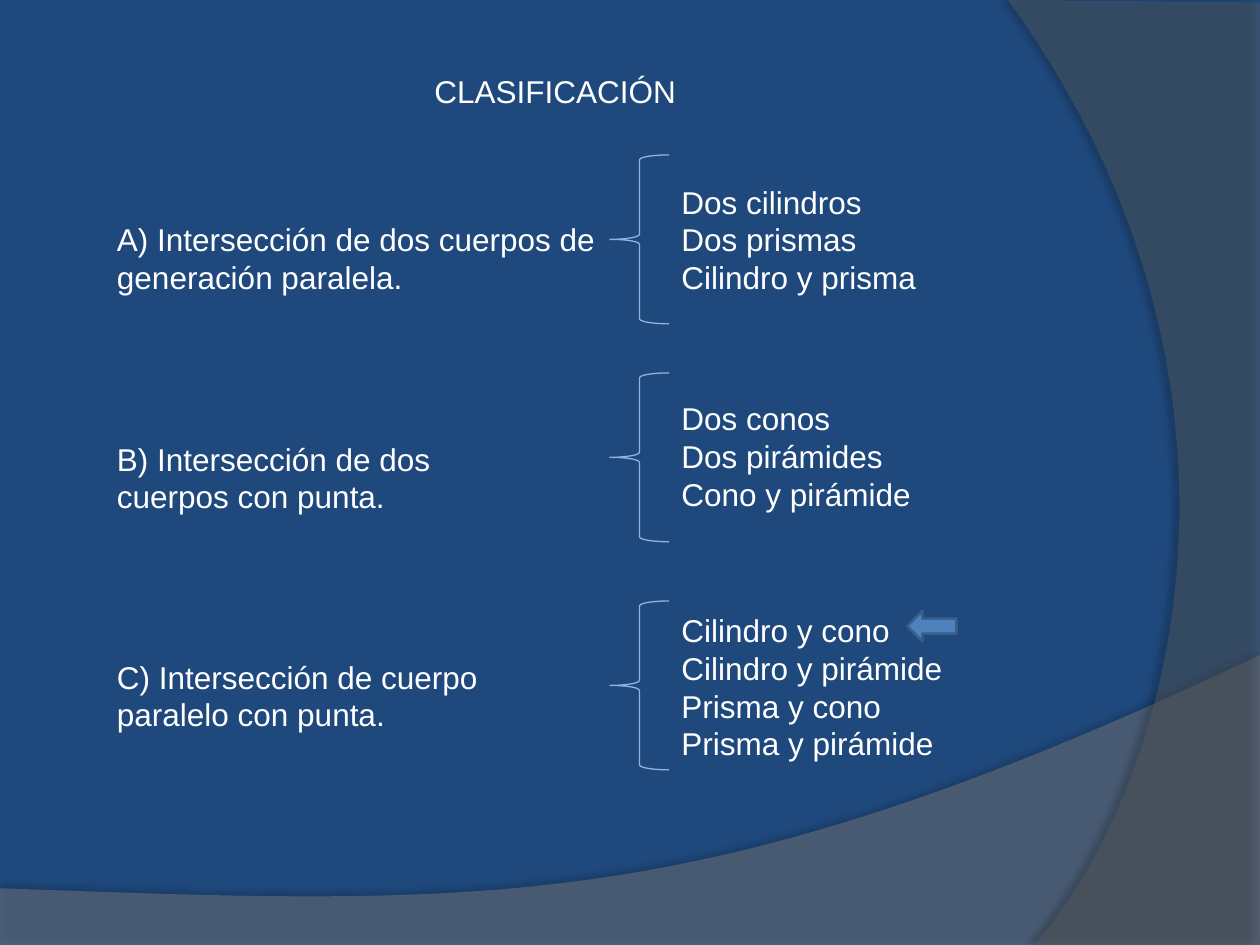
from dataclasses import dataclass

import lxml.etree
import pptx
import pptx.dml.color
import pptx.enum.shapes
import pptx.oxml.ns
import pptx.util

Inches = pptx.util.Inches
Pt = pptx.util.Pt
PRESETS = pptx.enum.shapes.MSO_SHAPE
Point = tuple[float, float]

COLORS = {
    "background": "1F497D",
    "text": "FFFFFF",
    "brace": "8EB4E3",
    "arrow": "4F81BD",
    "arrow_edge": "3A5F8C",
    "lower_wave": "7F7F7F",
    "right_wave": "5E5E5E",
    "shadow": "000000",
}
TEXT_FORMAT = {"name": "Arial", "size": Pt(18)}
LABEL_LEFT, BRACE_LEFT, EXAMPLES_LEFT = 0.83, 4.84, 5.31
BRACE_WIDTH, BRACE_HEIGHT = 0.47, 1.34
LINE_HEIGHT, BOX_PADDING = 0.3, 0.1
CURVE_STEPS = 60


@dataclass
class Wave:
    """Straight corners, then a cubic curve (four points) closing the outline."""
    color: str
    opacity: int
    corners: list[Point]
    curve: list[Point]
    shadow_opacity: int
    shadow_distance: float
    shadow_angle: int


@dataclass
class Category:
    label: list[str]
    label_top: float
    label_width: float
    brace_top: float
    examples: list[str]
    examples_top: float
    examples_width: float


WAVES = [
    Wave("lower_wave", 45, [(0, 7.05), (0, 7.51), (10, 7.51)],
         [(10, 5.2), (5.59, 7.29), (3.91, 7.19), (0, 7.05)], 35, 3.5, 270),
    Wave("right_wave", 40, [(10, 0.02), (10, 7.5)],
         [(8.21, 7.5), (9.35, 6.19), (10.18, 3), (8, 0)], 45, 4, 180),
]
CATEGORIES = [
    Category(["A) Intersección de dos cuerpos de generación paralela."], 1.7, 4.09, 1.23,
             ["Dos cilindros", "Dos prismas", "Cilindro y prisma"], 1.4, 2.36),
    Category(["B) Intersección de dos", "cuerpos con punta."], 3.44, 4.09, 2.96,
             ["Dos conos", "Dos pirámides", "Cono y pirámide"], 3.12, 2.13),
    Category(["C) Intersección de cuerpo paralelo con punta."], 5.17, 3.94, 4.77,
             ["Cilindro y cono", "Cilindro y pirámide", "Prisma y cono",
              "Prisma y pirámide"], 4.8, 2.52),
]


def rgb(name: str) -> pptx.dml.color.RGBColor:
    return pptx.dml.color.RGBColor.from_string(COLORS[name])


def curve_points(curve: list[Point]) -> list[Point]:
    """Sample a cubic Bézier curve, ends included."""
    points = []
    for step in range(CURVE_STEPS + 1):
        t = step / CURVE_STEPS
        weights = ((1 - t) ** 3, 3 * t * (1 - t) ** 2, 3 * t ** 2 * (1 - t), t ** 3)
        points.append(tuple(sum(w * p[axis] for w, p in zip(weights, curve))
                            for axis in (0, 1)))
    return points


def add_element(parent, tag: str, **attributes):
    element = lxml.etree.SubElement(parent, pptx.oxml.ns.qn(tag))
    for key, value in attributes.items():
        element.set(key, str(value))
    return element


def add_wave(slide, wave: Wave) -> None:
    outline = [(Inches(x), Inches(y)) for x, y in wave.corners + curve_points(wave.curve)]
    builder = slide.shapes.build_freeform(*outline[0])
    builder.add_line_segments(outline[1:], close=True)
    shape = builder.convert_to_shape()
    shape.fill.solid()
    shape.fill.fore_color.rgb = rgb(wave.color)
    shape.line.fill.background()
    shape.shadow.inherit = False
    properties = shape._element.spPr
    fill_color = properties.find(pptx.oxml.ns.qn("a:solidFill"))[0]
    add_element(fill_color, "a:alpha", val=wave.opacity * 1000)
    shadow = add_element(properties.find(pptx.oxml.ns.qn("a:effectLst")), "a:outerShdw",
                         blurRad=Pt(4), dist=Pt(wave.shadow_distance),
                         dir=wave.shadow_angle * 60000, algn="ctr", rotWithShape=0)
    shadow_color = add_element(shadow, "a:srgbClr", val=COLORS["shadow"])
    add_element(shadow_color, "a:alpha", val=wave.shadow_opacity * 1000)


def add_text(slide, lines: list[str], left: float, top: float, width: float,
             rows: int) -> None:
    height = rows * LINE_HEIGHT + BOX_PADDING
    box = slide.shapes.add_textbox(Inches(left), Inches(top), Inches(width), Inches(height))
    frame = box.text_frame
    frame.word_wrap = True
    frame.text = "\n".join(lines)
    for paragraph in frame.paragraphs:
        font = paragraph.runs[0].font
        for attribute, value in TEXT_FORMAT.items():
            setattr(font, attribute, value)
        font.color.rgb = rgb("text")


def add_preset(slide, preset, left: float, top: float, width: float, height: float,
               edge: str, edge_width: float, fill: str | None = None) -> None:
    shape = slide.shapes.add_shape(preset, Inches(left), Inches(top),
                                   Inches(width), Inches(height))
    shape.shadow.inherit = False
    if fill:
        shape.fill.solid()
        shape.fill.fore_color.rgb = rgb(fill)
    else:
        shape.fill.background()
    shape.line.color.rgb = rgb(edge)
    shape.line.width = Pt(edge_width)


def add_category(slide, category: Category) -> None:
    add_text(slide, category.label, LABEL_LEFT, category.label_top,
             category.label_width, rows=2)
    add_preset(slide, PRESETS.LEFT_BRACE, BRACE_LEFT, category.brace_top,
               BRACE_WIDTH, BRACE_HEIGHT, "brace", 0.75)
    add_text(slide, category.examples, EXAMPLES_LEFT, category.examples_top,
             category.examples_width, rows=len(category.examples))


def main() -> None:
    presentation = pptx.Presentation()
    presentation.slide_width = Inches(10)
    presentation.slide_height = Inches(7.5)
    slide = presentation.slides.add_slide(presentation.slide_layouts[6])
    slide.background.fill.solid()
    slide.background.fill.fore_color.rgb = rgb("background")

    for wave in WAVES:
        add_wave(slide, wave)
    add_text(slide, ["CLASIFICACIÓN"], 3.35, 0.52, 2.36, rows=1)
    for category in CATEGORIES:
        add_category(slide, category)
    add_preset(slide, PRESETS.LEFT_ARROW, 7.2, 4.85, 0.39, 0.24, "arrow_edge", 1.5, "arrow")

    presentation.save("out.pptx")


if __name__ == "__main__":
    main()
